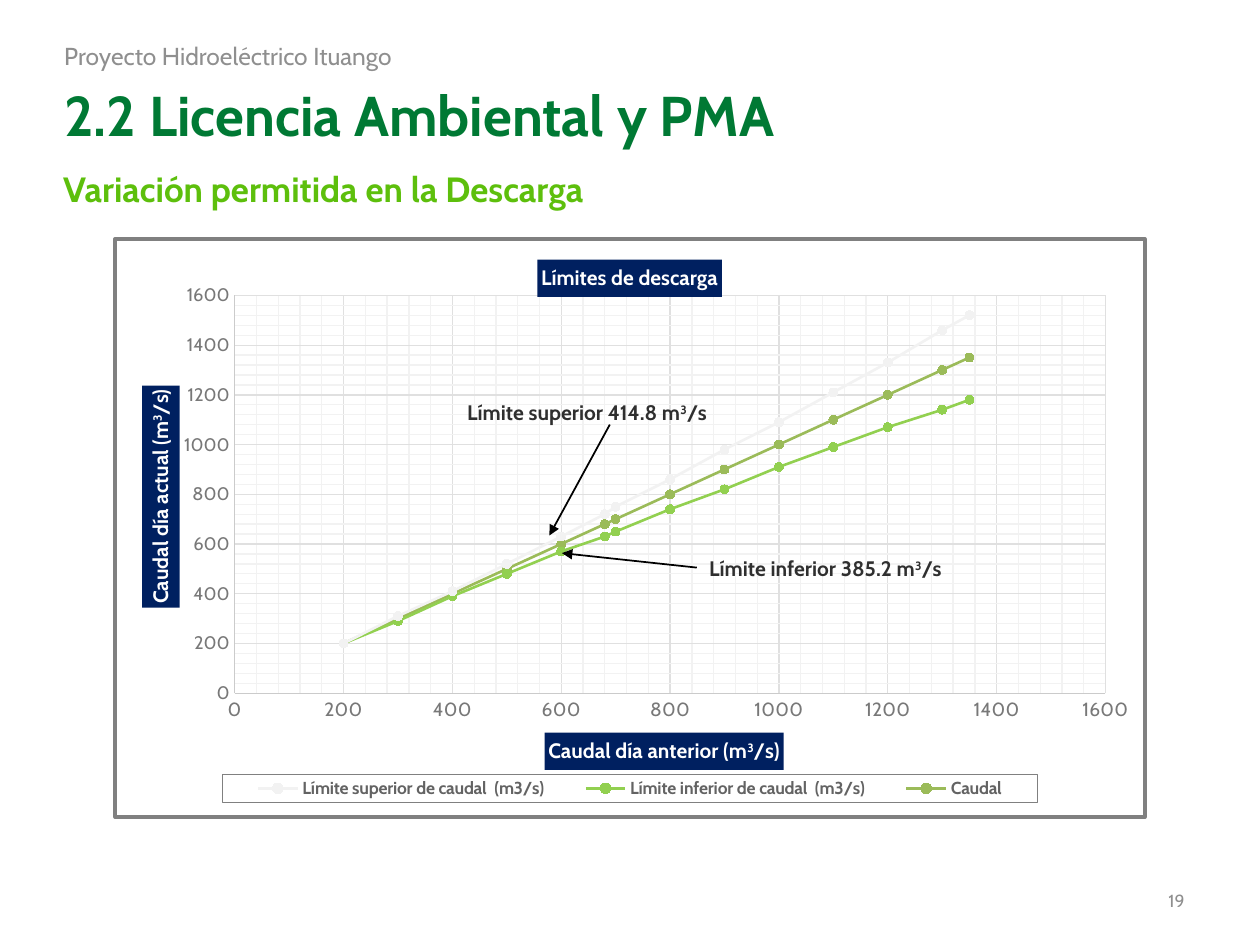
import pptx
import pptx.chart.data
import pptx.dml.color
import pptx.enum.chart
import pptx.enum.shapes
import pptx.enum.text
import pptx.oxml
import pptx.oxml.ns
import pptx.util

Inches = pptx.util.Inches
Pt = pptx.util.Pt
qn = pptx.oxml.ns.qn
ALIGN = pptx.enum.text.PP_ALIGN
ANCHOR = pptx.enum.text.MSO_ANCHOR
AUTO_SIZE = pptx.enum.text.MSO_AUTO_SIZE
NAMESPACES = pptx.oxml.ns.nsdecls("c", "a")

FLOWS = [1350, 1300, 1200, 1100, 1000, 900, 800, 700, 680, 600, 500, 400, 300, 200]
UPPER = [1520, 1460, 1330, 1210, 1090, 980, 860, 750, 720, 630, 520, 410, 310, 200]
LOWER = [1180, 1140, 1070, 990, 910, 820, 740, 650, 630, 570, 480, 390, 290, 200]
SERIES = [
    ("Límite superior de caudal  (m3/s)", UPPER, "F2F2F2"),
    ("Límite inferior de caudal  (m3/s)", LOWER, "92D050"),
    ("Caudal", FLOWS, "9BBB59"),
]


def rgb(hex_colour):
    return pptx.dml.color.RGBColor.from_string(hex_colour)


def set_line(line, colour, width):
    line.color.rgb = rgb(colour)
    line.width = Pt(width)


def outline_after(element, colour, width):
    """Add outline properties to a chart part as the next sibling of element."""
    element.addnext(outline(colour, width))


def outline(colour, width):
    return pptx.oxml.parse_xml(
        f'<c:spPr {NAMESPACES}><a:ln w="{Pt(width)}"><a:solidFill>'
        f'<a:srgbClr val="{colour}"/></a:solidFill></a:ln></c:spPr>')


def place(part, after, x, y, w=None, h=None):
    """Give a chart part a manual layout, in fractions of the chart."""
    for old in part.findall(qn("c:layout")):
        part.remove(old)
    target = '<c:layoutTarget val="inner"/>' if after is None else ""
    modes = '<c:xMode val="edge"/><c:yMode val="edge"/>'
    sizes = "".join(f'<c:{name} val="{value}"/>'
                    for name, value in zip("xywh", (x, y, w, h)) if value is not None)
    layout = pptx.oxml.parse_xml(
        f"<c:layout {NAMESPACES}><c:manualLayout>{target}{modes}{sizes}"
        "</c:manualLayout></c:layout>")
    if after is None:
        part.insert(0, layout)
    else:
        part.find(qn(after)).addnext(layout)


class Deck:
    font = "Cabin"
    ink, grey, tick, navy = "2F2F2F", "8F8F8F", "787878", "002060"

    def __init__(self):
        self.presentation = pptx.Presentation()
        self.presentation.slide_width = Inches(10)
        self.presentation.slide_height = Inches(7.5)
        self.slide = self.presentation.slides.add_slide(self.presentation.slide_layouts[3])

    def style(self, font, size, colour, bold=False):
        values = {"name": self.font, "size": Pt(size), "bold": bold}
        for name, value in values.items():
            setattr(font, name, value)
        font.color.rgb = rgb(colour)

    def add_words(self, paragraph, text, size, colour, bold=False):
        """Add text in which ^ marks the next character as superscript."""
        first, *others = text.split("^")
        pieces = [(first, False)]
        for other in others:
            pieces += [(other[0], True), (other[1:], False)]
        for piece, raised in pieces:
            run = paragraph.add_run()
            run.text = piece
            self.style(run.font, size, colour, bold)
            if raised:
                run.font._element.set("baseline", "30000")

    def heading(self, index, box, text, size, colour, bold=True):
        holder = self.slide.placeholders[index]
        holder.left, holder.top, holder.width, holder.height = map(Inches, box)
        frame = holder.text_frame
        values = {"margin_left": 0, "margin_top": 0, "margin_right": 0, "margin_bottom": 0,
                  "vertical_anchor": ANCHOR.MIDDLE, "auto_size": AUTO_SIZE.NONE}
        for name, value in values.items():
            setattr(frame, name, value)
        paragraph = frame.paragraphs[0]
        properties = paragraph._p.get_or_add_pPr()
        properties.set("marL", "0")
        properties.set("indent", "0")
        properties.append(pptx.oxml.parse_xml(f"<a:buNone {NAMESPACES}/>"))
        paragraph.alignment = ALIGN.LEFT
        paragraph.space_before = Pt(0)
        self.add_words(paragraph, text, size, colour, bold)

    def label(self, box, text, size, colour, bold=False, align=ALIGN.LEFT, wrap=False):
        shape = self.slide.shapes.add_textbox(*map(Inches, box))
        frame = shape.text_frame
        frame.word_wrap = wrap
        frame.vertical_anchor = ANCHOR.MIDDLE if wrap else ANCHOR.TOP
        paragraph = frame.paragraphs[0]
        paragraph.alignment = align
        self.add_words(paragraph, text, size, colour, bold)
        return shape

    def arrow(self, start, end, source=None, side=1):
        connector = self.slide.shapes.add_connector(
            pptx.enum.shapes.MSO_CONNECTOR.STRAIGHT, *map(Inches, start + end))
        if source is not None:
            connector.begin_connect(source, side)
        set_line(connector.line, "000000", 1)
        connector.line._get_or_add_ln().append(
            pptx.oxml.parse_xml(f'<a:tailEnd {NAMESPACES} type="triangle"/>'))
        connector._element.spPr.append(pptx.oxml.parse_xml(f"<a:effectLst {NAMESPACES}/>"))

    def chart_title(self, title, text, x, y):
        self.add_words(title.text_frame.paragraphs[0], text, 12, "FFFFFF", True)
        title.format.fill.solid()
        title.format.fill.fore_color.rgb = rgb(self.navy)
        place(title._element, "c:tx", x, y)

    def axis(self, axis, size):
        values = {"minimum_scale": 0, "maximum_scale": 1600, "major_unit": 200,
                  "minor_unit": 40, "has_major_gridlines": True, "has_minor_gridlines": True,
                  "major_tick_mark": pptx.enum.chart.XL_TICK_MARK.NONE,
                  "minor_tick_mark": pptx.enum.chart.XL_TICK_MARK.NONE}
        for name, value in values.items():
            setattr(axis, name, value)
        axis.tick_labels.number_format = "0"
        axis.tick_labels.number_format_is_linked = False
        self.style(axis.tick_labels.font, size, self.tick)
        set_line(axis.format.line, "CBCBCB", 0.75)
        set_line(axis.major_gridlines.format.line, "E0E0E0", 0.75)
        axis._element.find(qn("c:minorGridlines")).append(outline("F2F2F2", 0.75))

    def discharge_chart(self, box):
        data = pptx.chart.data.XyChartData()
        for name, limits, _ in SERIES:
            series = data.add_series(name)
            for flow, limit in zip(FLOWS, limits):
                series.add_data_point(flow, limit)
        chart = self.slide.shapes.add_chart(
            pptx.enum.chart.XL_CHART_TYPE.XY_SCATTER_LINES, *map(Inches, box), data).chart
        self.style(chart.font, 10, self.ink)
        outline_after(chart._chartSpace.chart, "808080", 2.25)
        place(chart._chartSpace.chart.plotArea, None, 0.116, 0.098, 0.846, 0.688)

        plot = chart.plots[0]
        plot.vary_by_categories = False
        for series, (_, _, colour) in zip(plot.series, SERIES):
            series.smooth = False
            set_line(series.format.line, colour, 1.5)
            marker = series.marker
            marker.style = pptx.enum.chart.XL_MARKER_STYLE.CIRCLE
            marker.size = 5
            marker.format.fill.solid()
            marker.format.fill.fore_color.rgb = rgb(colour)
            set_line(marker.format.line, colour, 0.75)

        self.axis(chart.category_axis, 11)
        self.axis(chart.value_axis, 10.5)
        chart.has_title = True
        self.chart_title(chart.chart_title, "Límites de descarga", 0.41, 0.036)
        self.chart_title(chart.category_axis.axis_title, "Caudal día anterior (m^3/s)", 0.417, 0.854)
        flow_title = chart.value_axis.axis_title
        self.chart_title(flow_title, "Caudal día actual (m^3/s)", 0.026, 0.254)
        flow_title.text_frame._txBody.bodyPr.set("rot", "-5400000")
        flow_title.text_frame._txBody.bodyPr.set("vert", "horz")

        chart.has_legend = True
        legend = chart.legend
        legend.position = pptx.enum.chart.XL_LEGEND_POSITION.BOTTOM
        legend.include_in_layout = False
        self.style(legend.font, 10, "636363", True)
        place(legend._element, "c:legendPos", 0.104, 0.926, 0.792, 0.049)
        outline_after(legend._element.find(qn("c:overlay")), "808080", 0.75)


def main():
    deck = Deck()
    deck.heading(1, (0.51, 0.29, 8.28, 0.31), "Proyecto Hidroeléctrico Ituango", 14, deck.grey, False)
    deck.heading(0, (0.51, 0.67, 8.28, 0.47), "2.2 Licencia Ambiental y PMA", 32, "007934")
    deck.heading(2, (0.5, 1.26, 8.67, 0.47), "Variación permitida en la Descarga", 20, "5DBF0C")
    deck.label((7.17, 6.95, 2.33, 0.4), "19", 10, deck.grey, align=ALIGN.RIGHT, wrap=True)
    deck.discharge_chart((0.9, 1.88, 8.2, 4.62))
    deck.label((3.61, 3.12, 2.39, 0.29), "Límite superior 414.8 m^3/s", 12, deck.ink, True)
    deck.arrow((4.84, 3.37), (4.36, 4.25))
    lower_limit = deck.label((5.53, 4.36, 2.25, 0.29), "Límite inferior 385.2 m^3/s", 12, deck.ink, True)
    deck.arrow((5.53, 4.51), (4.46, 4.39), lower_limit)
    deck.presentation.save("out.pptx")


if __name__ == "__main__":
    main()
